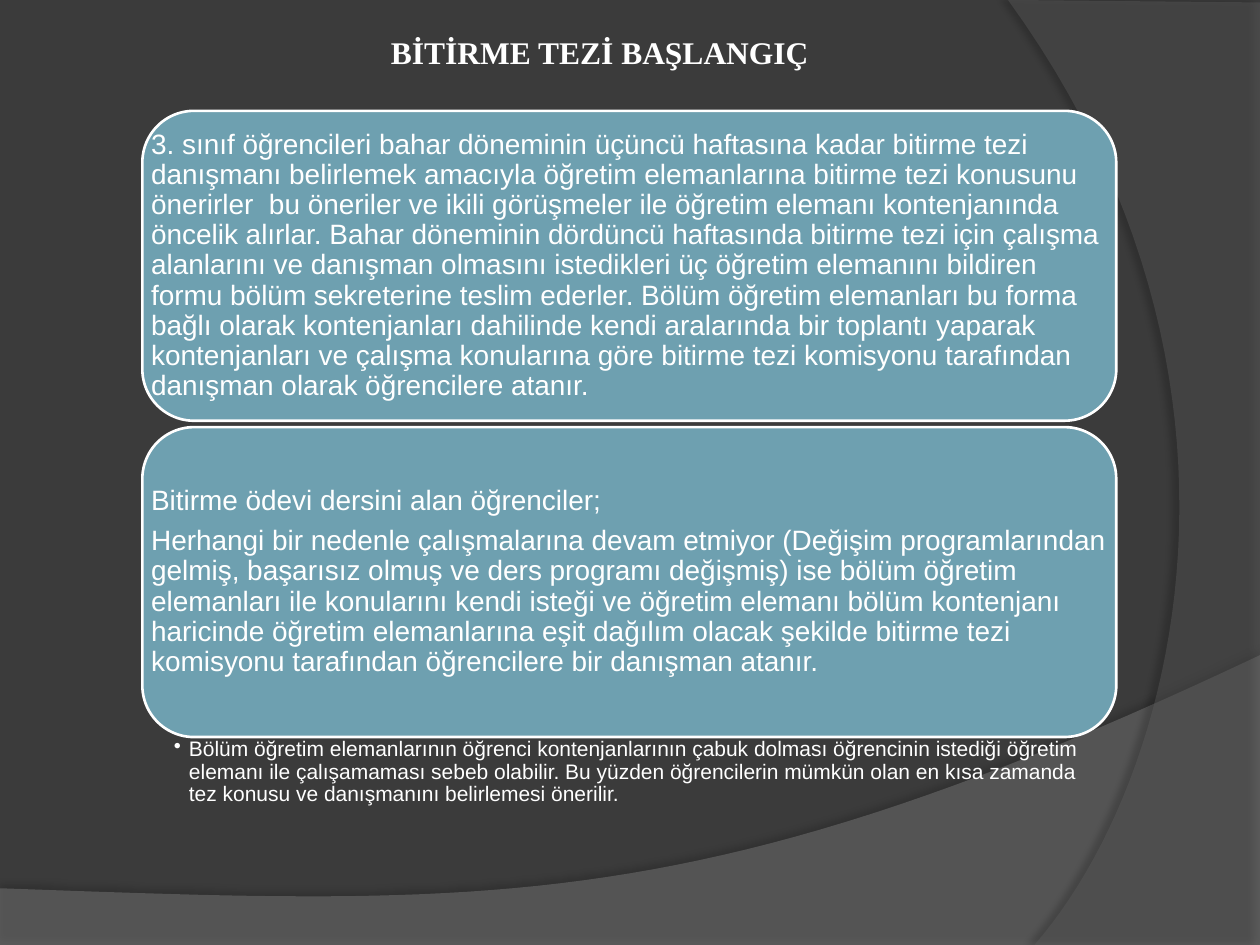
from dataclasses import dataclass

from lxml import etree
from pptx import Presentation
from pptx.dml.color import RGBColor
from pptx.enum.shapes import MSO_SHAPE
from pptx.enum.text import MSO_ANCHOR, PP_ALIGN
from pptx.oxml.ns import qn
from pptx.util import Inches, Pt

ROUND_RECT = MSO_SHAPE.ROUNDED_RECTANGLE
TOP, MIDDLE = MSO_ANCHOR.TOP, MSO_ANCHOR.MIDDLE
LEFT, CENTER = PP_ALIGN.LEFT, PP_ALIGN.CENTER

COLORS = {
    "background": "3B3B3B",
    "wave": "7F7F7F",
    "arc": "5E5E5E",
    "card": "6EA0B0",
    "white": "FFFFFF",
    "shadow": "000000",
}
CARD_X, CARD_W, CARD_H = 1.13, 7.73, 2.46

Point = tuple[float, float]


@dataclass
class Swoosh:
    """Background area: straight corners, then a Bezier edge from the last one."""
    corners: list[Point]
    curve: tuple[Point, Point, Point]
    color: str
    alpha: int
    shadow_alpha: int
    shadow_dist: float
    shadow_angle: int


@dataclass
class Card:
    top: float
    paragraphs: list[str]


SWOOSHES = [
    Swoosh([(0, 7.05), (0, 7.5), (10, 7.5), (10, 5.2)],
           ((5.59, 7.29), (3.91, 7.19), (0, 7.05)), "wave", 45, 35, 3.5, 270),
    Swoosh([(10, 0.02), (10, 7.5), (8.21, 7.5)],
           ((9.35, 6.19), (10.18, 3), (8, 0)), "arc", 40, 45, 4, 180),
]

CARDS = [
    Card(0.88, [
        "3. sınıf öğrencileri bahar döneminin üçüncü haftasına kadar bitirme tezi "
        "danışmanı belirlemek amacıyla öğretim elemanlarına bitirme tezi konusunu "
        "önerirler  bu öneriler ve ikili görüşmeler ile öğretim elemanı kontenjanında "
        "öncelik alırlar. Bahar döneminin dördüncü haftasında bitirme tezi için çalışma "
        "alanlarını ve danışman olmasını istedikleri üç öğretim elemanını bildiren "
        "formu bölüm sekreterine teslim ederler. Bölüm öğretim elemanları bu forma "
        "bağlı olarak kontenjanları dahilinde kendi aralarında bir toplantı yaparak "
        "kontenjanları ve çalışma konularına göre bitirme tezi komisyonu tarafından "
        "danışman olarak öğrencilere atanır."]),
    Card(3.39, [
        "Bitirme ödevi dersini alan öğrenciler;",
        "Herhangi bir nedenle çalışmalarına devam etmiyor (Değişim programlarından "
        "gelmiş, başarısız olmuş ve ders programı değişmiş) ise bölüm öğretim "
        "elemanları ile konularını kendi isteği ve öğretim elemanı bölüm kontenjanı "
        "haricinde öğretim elemanlarına eşit dağılım olacak şekilde bitirme tezi "
        "komisyonu tarafından öğrencilere bir danışman atanır."]),
]

NOTE = ("Bölüm öğretim elemanlarının öğrenci kontenjanlarının çabuk dolması öğrencinin "
        "istediği öğretim elemanı ile çalışamaması sebeb olabilir. Bu yüzden öğrencilerin "
        "mümkün olan en kısa zamanda tez konusu ve danışmanını belirlemesi önerilir.")


def rgb(name: str) -> RGBColor:
    return RGBColor.from_string(COLORS[name])


def bezier(p0: Point, p1: Point, p2: Point, p3: Point, steps: int = 48) -> list[Point]:
    """Points along a cubic curve, without its start."""
    points = []
    for i in range(1, steps + 1):
        t = i / steps
        u = 1 - t
        weights = (u ** 3, 3 * u * u * t, 3 * u * t * t, t ** 3)
        x, y = (sum(w * c for w, c in zip(weights, axis))
                for axis in zip(p0, p1, p2, p3))
        points.append((x, y))
    return points


def add_alpha(color, percent: int) -> None:
    etree.SubElement(color, qn("a:alpha"), val=str(percent * 1000))


def add_swoosh(s, swoosh: Swoosh) -> None:
    outline = swoosh.corners + bezier(swoosh.corners[-1], *swoosh.curve)
    start, *rest = [(Inches(x), Inches(y)) for x, y in outline]
    fb = s.shapes.build_freeform(*start)
    fb.add_line_segments(rest, close=True)
    sp = fb.convert_to_shape()
    sp.fill.solid()
    sp.fill.fore_color.rgb = rgb(swoosh.color)
    sp.line.fill.background()
    sp.shadow.inherit = False
    sp_pr = sp.element.spPr
    add_alpha(sp_pr.find(qn("a:solidFill"))[0], swoosh.alpha)
    # Soft shadow along the curved edge
    shadow = etree.SubElement(
        sp_pr.find(qn("a:effectLst")), qn("a:outerShdw"), blurRad=str(Pt(4)),
        dist=str(Pt(swoosh.shadow_dist)), dir=str(swoosh.shadow_angle * 60000),
        algn="ctr", rotWithShape="0")
    color = etree.SubElement(shadow, qn("a:srgbClr"), val=COLORS["shadow"])
    add_alpha(color, swoosh.shadow_alpha)


def add_text(s, paragraphs: list[str], x: float, y: float, w: float, h: float, *,
             size: int, font: str = "Arial", bold: bool = False, align=LEFT,
             anchor=TOP, insets: tuple = (0.1, 0.05, 0.1, 0.05),
             line_spacing: float = 1, space_after: float = 0,
             bullet: bool = False) -> None:
    tf = s.shapes.add_textbox(Inches(x), Inches(y), Inches(w), Inches(h)).text_frame
    tf.word_wrap = True
    tf.vertical_anchor = anchor
    tf.margin_left, tf.margin_top, tf.margin_right, tf.margin_bottom = map(Inches, insets)
    for i, text in enumerate(paragraphs):
        p = tf.add_paragraph() if i else tf.paragraphs[0]
        p.alignment = align
        p.line_spacing = line_spacing
        p.space_after = Pt(space_after)
        r = p.add_run()
        r.text = text
        r.font.name, r.font.size, r.font.bold = font, Pt(size), bold
        r.font.color.rgb = rgb("white")
        if bullet:
            p.level = 1
            p_pr = p._p.get_or_add_pPr()
            p_pr.set("marL", str(Inches(0.12)))
            p_pr.set("indent", str(Inches(-0.12)))
            etree.SubElement(p_pr, qn("a:buChar"), char="•")


def add_card(s, card: Card) -> None:
    box = (CARD_X, card.top, CARD_W, CARD_H)
    sp = s.shapes.add_shape(ROUND_RECT, *map(Inches, box))
    sp.shadow.inherit = False
    sp.fill.solid()
    sp.fill.fore_color.rgb = rgb("card")
    sp.line.color.rgb = rgb("white")
    sp.line.width = Pt(1.5)
    add_text(s, card.paragraphs, *box, size=16, anchor=MIDDLE, insets=(0.07,) * 4,
             line_spacing=0.9, space_after=5.6)


def main() -> None:
    prs = Presentation()
    prs.slide_width, prs.slide_height = Inches(10), Inches(7.5)
    s = prs.slides.add_slide(prs.slide_layouts[6])

    # Background
    s.background.fill.solid()
    s.background.fill.fore_color.rgb = rgb("background")
    for swoosh in SWOOSHES:
        add_swoosh(s, swoosh)

    # Cards and the note below them
    for card in CARDS:
        add_card(s, card)
    add_text(s, [NOTE], CARD_X, 5.84, CARD_W, 0.78, size=12, bullet=True,
             insets=(0.25, 0.02, 0.12, 0.02), line_spacing=0.9, space_after=2.4)

    # Title
    add_text(s, ["BİTİRME TEZİ BAŞLANGIÇ"], 2.32, 0.21, 4.88, 0.4, size=18,
             font="Times New Roman", bold=True, align=CENTER)

    prs.save("out.pptx")


if __name__ == "__main__":
    main()
